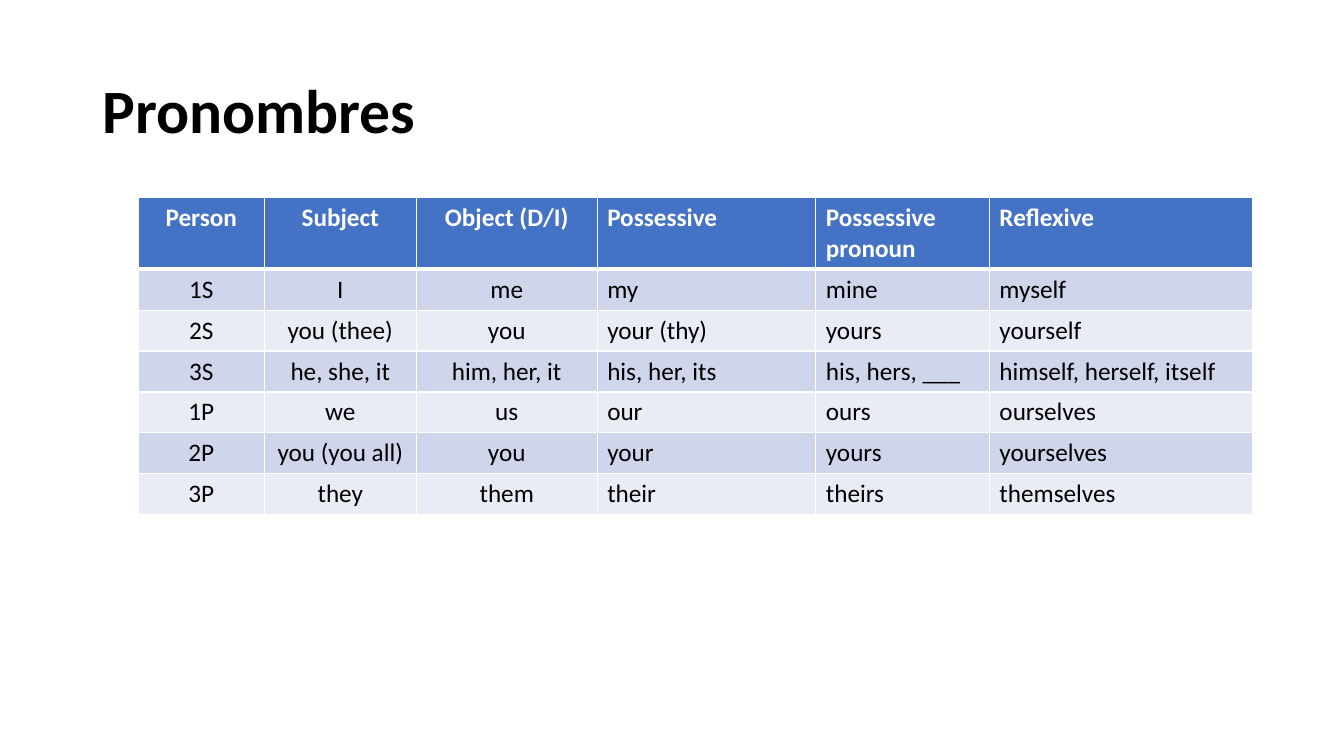
from lxml.etree import SubElement
from pptx import Presentation
from pptx.dml.color import RGBColor
from pptx.enum.text import MSO_ANCHOR, PP_ALIGN
from pptx.oxml.ns import qn
from pptx.util import Pt

# Content
TITLE = "Pronombres"
ROWS = [
    ("Person", "Subject", "Object (D/I)", "Possessive", "Possessive pronoun", "Reflexive"),
    ("1S", "I", "me", "my", "mine", "myself"),
    ("2S", "you (thee)", "you", "your (thy)", "yours", "yourself"),
    ("3S", "he, she, it", "him, her, it", "his, her, its", "his, hers, ___", "himself, herself, itself"),
    ("1P", "we", "us", "our", "ours", "ourselves"),
    ("2P", "you (you all)", "you", "your", "yours", "yourselves"),
    ("3P", "they", "them", "their", "theirs", "themselves"),
]

# Layout and formats
WIDTHS = [90, 108.6, 129.2, 156.2, 124, 188]
CENTRED = 3
ROW_H = 29.2
HEAD_FILL = "4472C4"
BANDS = ["E9EBF5", "CFD5EA"]
RULE = "FFFFFF"
TITLE_FONT = {"name": "Calibri", "size": Pt(44), "bold": True}
HEAD_FONT = {"name": "Calibri", "size": Pt(18), "bold": True}
BODY_FONT = {"name": "Calibri", "size": Pt(18), "bold": False}


def color(code):
    return RGBColor.from_string(code)


def style(font, form, code):
    for key, value in form.items():
        setattr(font, key, value)
    font.color.rgb = color(code)


def border(cell, sides):
    props = cell._tc.get_or_add_tcPr()
    for side, width in sides.items():
        line = SubElement(props, qn("a:ln" + side), w=str(Pt(width)))
        fill = SubElement(line, qn("a:solidFill"))
        SubElement(fill, qn("a:srgbClr"), val=RULE)


def add_title(slide):
    title = slide.shapes.title
    box = {"left": 66, "top": 28.8, "width": 828, "height": 104.4}
    for key, value in box.items():
        setattr(title, key, Pt(value))
    frame = title.text_frame
    frame.text = TITLE
    frame.vertical_anchor = MSO_ANCHOR.MIDDLE
    para = frame.paragraphs[0]
    para.alignment = PP_ALIGN.LEFT
    para.line_spacing = 0.9
    style(para.font, TITLE_FONT, "000000")


def add_grid(slide):
    grid = slide.shapes.add_table(
        len(ROWS), len(WIDTHS), Pt(98.8), Pt(141.2),
        Pt(sum(WIDTHS)), Pt(ROW_H * len(ROWS))).table
    for col, width in zip(grid.columns, WIDTHS):
        col.width = Pt(width)
    for r, words in enumerate(ROWS):
        grid.rows[r].height = Pt(ROW_H)
        head = r == 0
        for c, word in enumerate(words):
            cell = grid.cell(r, c)
            cell.text = word
            # A thick rule parts the header from the body
            border(cell, {"L": 1, "R": 1, "T": 3 if r == 1 else 1, "B": 3 if head else 1})
            cell.fill.solid()
            cell.fill.fore_color.rgb = color(HEAD_FILL if head else BANDS[r % 2])
            para = cell.text_frame.paragraphs[0]
            para.alignment = PP_ALIGN.CENTER if c < CENTRED else PP_ALIGN.LEFT
            style(para.font, HEAD_FONT if head else BODY_FONT, "FFFFFF" if head else "000000")


def main():
    deck = Presentation()
    deck.slide_width, deck.slide_height = Pt(960), Pt(540)
    slide = deck.slides.add_slide(deck.slide_layouts[5])
    add_title(slide)
    add_grid(slide)
    deck.save("out.pptx")


if __name__ == "__main__":
    main()
